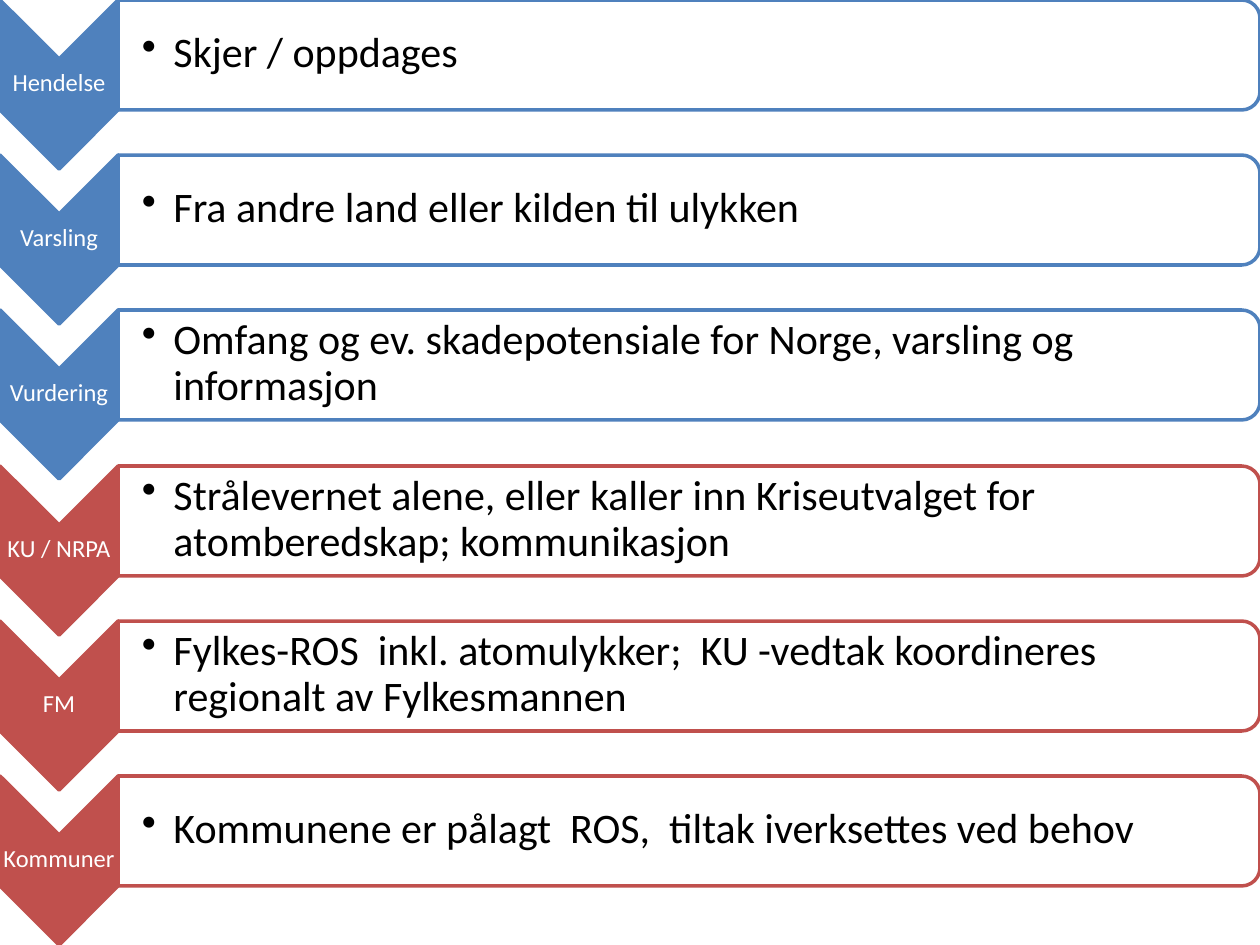
from dataclasses import dataclass

from lxml.etree import SubElement
from pptx import Presentation
from pptx.dml.color import RGBColor
from pptx.enum.shapes import MSO_SHAPE
from pptx.enum.text import MSO_ANCHOR, PP_ALIGN
from pptx.oxml.ns import qn
from pptx.shapes.autoshape import Shape
from pptx.shapes.shapetree import GroupShapes
from pptx.util import Emu, Pt

PX = 914400 / 126
WIDTH, HEIGHT = 1260, 945
LABEL_W, CHEVRON_H, BAR_H = 118, 169, 110
COLORS = {"blue": "4F81BD", "red": "C0504D", "white": "FFFFFF", "black": "000000"}


@dataclass(frozen=True)
class Step:
    label: str
    text: str
    color: str


@dataclass(frozen=True)
class Box:
    x: int
    y: int
    w: int
    h: int


STEPS = [
    Step("Hendelse", "Skjer / oppdages", "blue"),
    Step("Varsling", "Fra andre land eller kilden til ulykken", "blue"),
    Step("Vurdering", "Omfang og ev. skadepotensiale for Norge, varsling og informasjon", "blue"),
    Step("KU / NRPA", "Strålevernet alene, eller kaller inn Kriseutvalget for atomberedskap; kommunikasjon", "red"),
    Step("FM", "Fylkes-ROS  inkl. atomulykker;  KU -vedtak koordineres regionalt av Fylkesmannen", "red"),
    Step("Kommuner", "Kommunene er pålagt  ROS,  tiltak iverksettes ved behov", "red"),
]


def px(n: float) -> Emu:
    return Emu(round(n * PX))


def rgb(name: str) -> RGBColor:
    return RGBColor.from_string(COLORS[name])


def add_turned(shapes: GroupShapes, kind: MSO_SHAPE, box: Box, fill: str, line: str) -> Shape:
    left = box.x + (box.w - box.h) / 2
    top = box.y + (box.h - box.w) / 2
    sp = shapes.add_shape(kind, px(left), px(top), px(box.h), px(box.w))
    sp.rotation = 90
    sp.shadow.inherit = False
    sp.fill.solid()
    sp.fill.fore_color.rgb = rgb(fill)
    sp.line.color.rgb = rgb(line)
    sp.line.width = Pt(2)
    return sp


def add_text(shapes: GroupShapes, box: Box, text: str, size: int, color: str,
             inset: int, left_inset: int, after: float):
    tf = shapes.add_textbox(px(box.x), px(box.y), px(box.w), px(box.h)).text_frame
    tf.word_wrap = True
    tf.vertical_anchor = MSO_ANCHOR.MIDDLE
    tf.margin_left = px(left_inset)
    tf.margin_top = tf.margin_right = tf.margin_bottom = px(inset)
    p = tf.paragraphs[0]
    p.text = text
    p.line_spacing = 0.9
    p.space_after = Pt(size * after)
    font = p.runs[0].font
    font.name = "Calibri"
    font.size = Pt(size)
    font.color.rgb = rgb(color)
    return p


def add_step(shapes: GroupShapes, step: Step, y: int) -> None:
    add_turned(shapes, MSO_SHAPE.CHEVRON, Box(0, y, LABEL_W, CHEVRON_H), step.color, step.color)
    p = add_text(shapes, Box(0, y + 59, LABEL_W, 50), step.label, 14, "white", 1, 1, 0.35)
    p.alignment = PP_ALIGN.CENTER

    bar = Box(LABEL_W, y, WIDTH - LABEL_W, BAR_H)
    sp = add_turned(shapes, MSO_SHAPE.ROUND_2_SAME_RECTANGLE, bar, "white", step.color)
    fill = sp.fill._xPr.find(qn("a:solidFill"))
    SubElement(fill[0], qn("a:alpha"), val="90000")

    p = add_text(shapes, Box(LABEL_W, y + 5, 1137, 98), step.text, 24, "black", 2, 24, 0.15)
    p.level = 1
    pPr = p._p.get_or_add_pPr()
    pPr.set("marL", "228600")
    pPr.set("indent", "-228600")
    SubElement(pPr, qn("a:buChar"), char="•")


def main() -> None:
    prs = Presentation()
    prs.slide_width, prs.slide_height = px(WIDTH), px(HEIGHT)
    s = prs.slides.add_slide(prs.slide_layouts[6])
    shapes = s.shapes.add_group_shape().shapes
    last_top = HEIGHT - CHEVRON_H
    for i, step in enumerate(STEPS):
        add_step(shapes, step, round(i * last_top / (len(STEPS) - 1)))
    prs.save("out.pptx")


if __name__ == "__main__":
    main()
